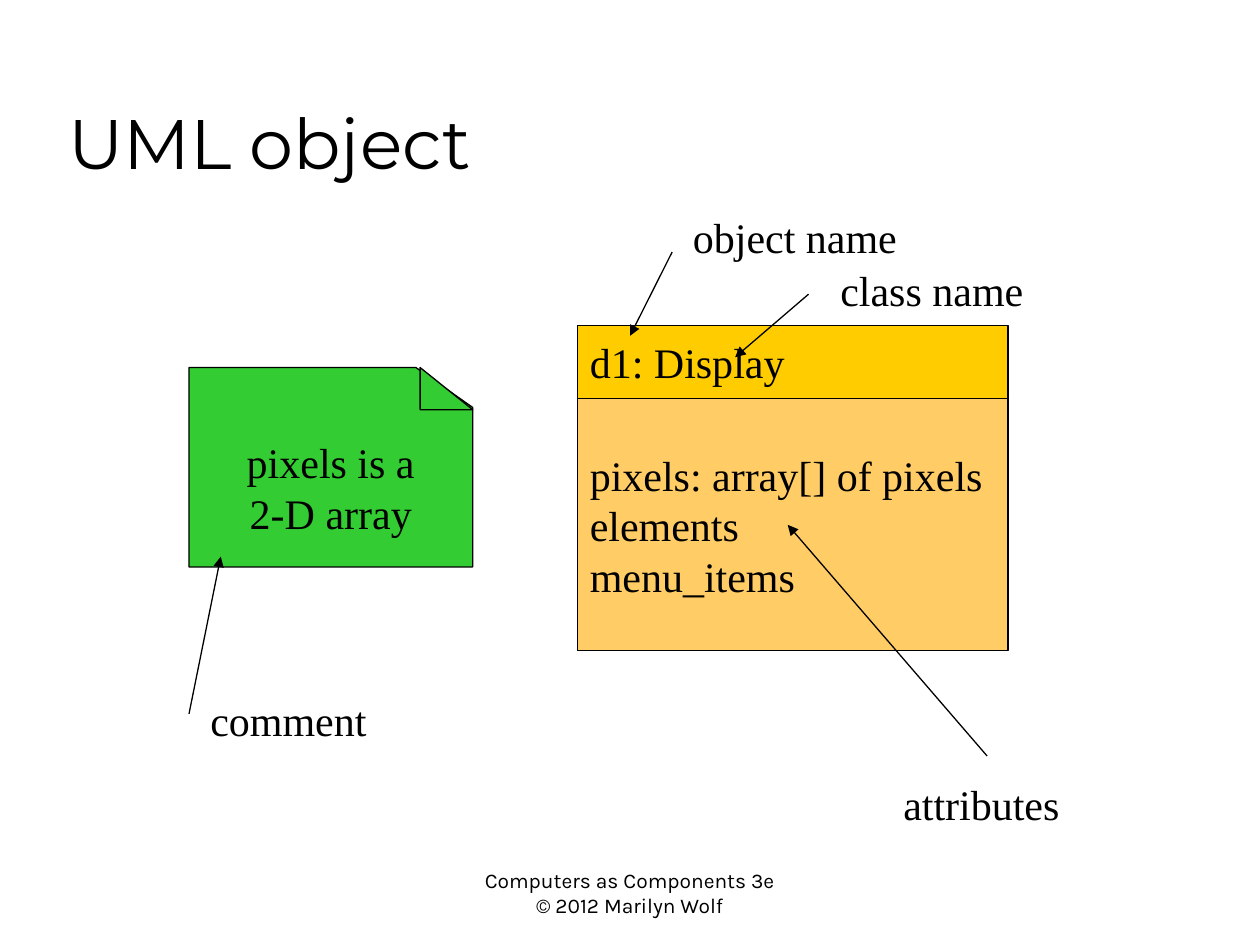
"""Build the UML object slide: a class box, a comment note and four labelled arrows."""
from dataclasses import dataclass

from lxml.etree import SubElement
from pptx import Presentation
from pptx.dml.color import RGBColor as Rgb
from pptx.enum.shapes import MSO_CONNECTOR as Link, MSO_SHAPE as Kind
from pptx.enum.text import MSO_ANCHOR as Anchor, MSO_AUTO_SIZE as Fit, PP_ALIGN as Align
from pptx.oxml.ns import qn
from pptx.util import Cm, Pt


@dataclass(frozen=True)
class Theme:
    ink: Rgb = Rgb.from_string("000000")
    name_fill: Rgb = Rgb.from_string("FFCC00")
    body_fill: Rgb = Rgb.from_string("FFCC66")
    note_fill: Rgb = Rgb.from_string("33CC33")
    title_font: str = "Montserrat"
    label_font: str = "Times New Roman"
    footer_font: str = "Karla"
    title_size: Pt = Pt(40)
    label_size: Pt = Pt(24)
    footer_size: Pt = Pt(12)
    line: Pt = Pt(0.75)


theme = Theme()


def write(shape, lines, font=theme.label_font, size=theme.label_size,
          align=Align.LEFT, anchor=Anchor.TOP, wrap=False, fit=Fit.NONE):
    frame = shape.text_frame
    frame.word_wrap = wrap
    frame.auto_size = fit
    frame.vertical_anchor = anchor
    for index, text in enumerate(lines):
        para = frame.paragraphs[0] if index == 0 else frame.add_paragraph()
        para.alignment = align
        span = para.add_run()
        span.text = text
        span.font.name = font
        span.font.size = size
        span.font.color.rgb = theme.ink


deck = Presentation()
deck.slide_width, deck.slide_height = Cm(25.4), Cm(19.05)
page = deck.slides.add_slide(deck.slide_layouts[5])

title = page.shapes.title
title.left, title.top, title.width, title.height = Cm(1.12), Cm(0.64), Cm(21.59), Cm(3.18)
write(title, ["UML object"], font=theme.title_font, size=theme.title_size,
      anchor=Anchor.BOTTOM, wrap=True)

footer = page.shapes.add_textbox(Cm(9.31), Cm(17.36), Cm(6.77), Cm(1.27))
write(footer, ["Computers as Components 3e", "© 2012 Marilyn Wolf"], font=theme.footer_font,
      size=theme.footer_size, align=Align.CENTER, wrap=True, fit=Fit.SHAPE_TO_FIT_TEXT)

boxes = [
    (Kind.RECTANGLE, 11.64, 6.56, 8.68, 1.48, theme.name_fill, Align.LEFT, ["d1: Display"]),
    (Kind.RECTANGLE, 11.64, 8.04, 8.68, 5.08, theme.body_fill, Align.LEFT,
     ["pixels: array[] of pixels", "elements", "menu_items"]),
    (Kind.FLOWCHART_CARD, 3.81, 7.41, 5.72, 4.02, theme.note_fill, Align.CENTER,
     ["pixels is a", "2-D array"]),
    (Kind.RIGHT_TRIANGLE, 8.47, 7.41, 1.06, 0.85, theme.note_fill, Align.CENTER, []),
]
for kind, left, top, width, height, fill, align, lines in boxes:
    box = page.shapes.add_shape(kind, Cm(left), Cm(top), Cm(width), Cm(height))
    box.shadow.inherit = False
    box.fill.solid()
    box.fill.fore_color.rgb = fill
    box.line.color.rgb = theme.ink
    box.line.width = theme.line
    if kind == Kind.FLOWCHART_CARD:
        box.element.spPr.find(qn("a:xfrm")).set("flipH", "1")
    write(box, lines, align=align, anchor=Anchor.MIDDLE)

callouts = [
    ("comment", (3.99, 13.87, 3.66), (3.81, 14.39), (4.45, 11.22)),
    ("object name", (13.72, 4.14, 4.62), (13.55, 5.08), (12.7, 6.77)),
    ("class name", (16.69, 5.21, 4.19), (16.3, 5.93), (14.82, 7.2)),
    ("attributes", (17.96, 15.57, 3.66), (19.9, 15.24), (15.88, 10.58)),
]
for text, (left, top, width), start, end in callouts:
    callout = page.shapes.add_group_shape()
    arrow = callout.shapes.add_connector(Link.STRAIGHT, *map(Cm, start + end))
    arrow.line.color.rgb = theme.ink
    arrow.line.width = theme.line
    SubElement(arrow.line._get_or_add_ln(), qn("a:tailEnd"), type="triangle")
    SubElement(arrow._element.spPr, qn("a:effectLst"))
    label = callout.shapes.add_textbox(Cm(left), Cm(top), Cm(width), Cm(1.27))
    write(label, [text], fit=Fit.SHAPE_TO_FIT_TEXT)

deck.save("out.pptx")
